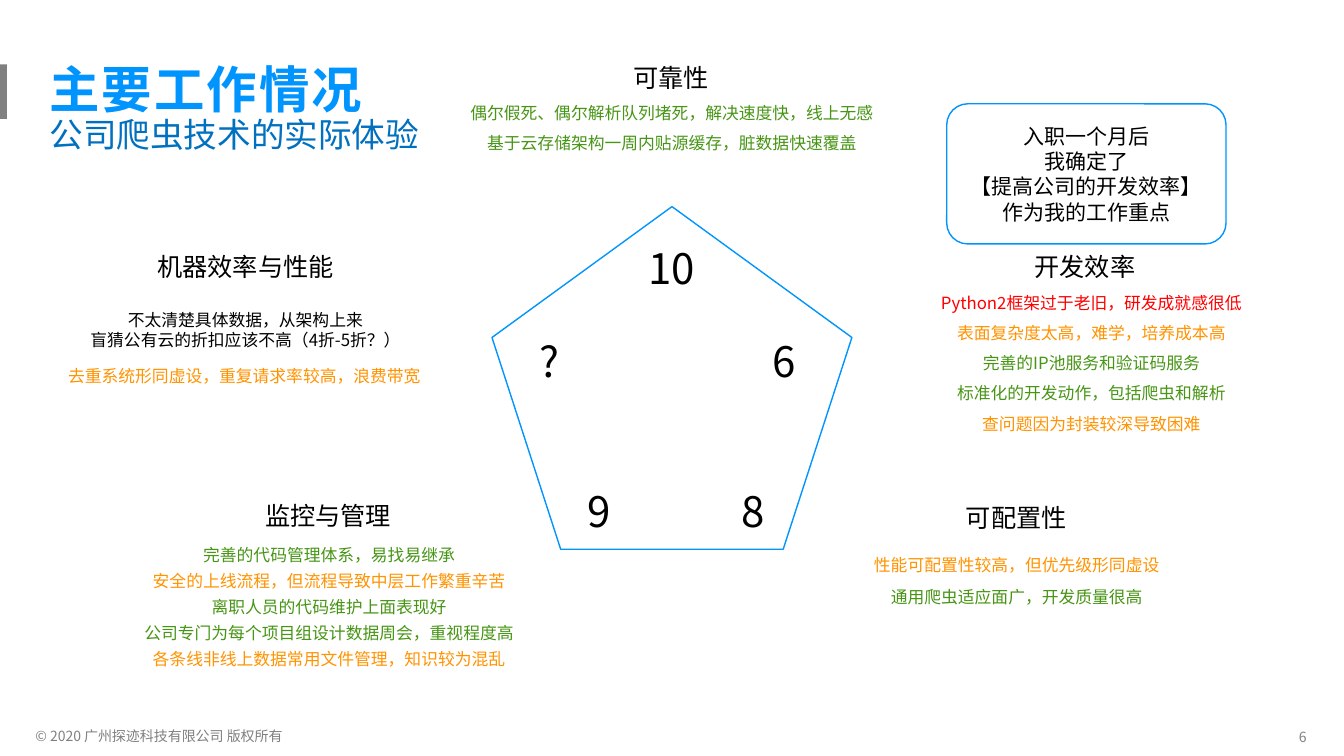
from lxml import etree
from pptx import Presentation
from pptx import util as u
from pptx.dml import color
from pptx.enum import shapes, text
from pptx.oxml import ns

FONT = "Noto Sans CJK SC"
BLUE, GREY, BLACK, WHITE = "0094FF", "808080", "000000", "FFFFFF"
GREEN, ORANGE, RED = "479515", "FF9300", "FF0000"
LEFT, CENTER, RIGHT = text.PP_ALIGN.LEFT, text.PP_ALIGN.CENTER, text.PP_ALIGN.RIGHT


def rgb(value):
    return color.RGBColor.from_string(value)


def place(left, top, width, height):
    return [u.Inches(value) for value in (left, top, width, height)]


def write(frame, lines, size, tint, align=LEFT, inset=0, wrap=True,
          bold=False, spacing=None, tracking=None):
    frame.word_wrap = wrap
    frame.margin_left = frame.margin_right = u.Inches(inset)
    frame.margin_top = frame.margin_bottom = u.Inches(inset)
    frame.text = "\n".join(lines)
    for para in frame.paragraphs:
        para.alignment = align
        para.line_spacing = spacing
        para.font.name = FONT
        para.font.size = u.Pt(size)
        para.font.bold = bold
        para.font.color.rgb = rgb(tint)
        defaults = para._p.pPr.find(ns.qn("a:defRPr"))
        etree.SubElement(defaults, ns.qn("a:ea")).set("typeface", FONT)
        if tracking:
            defaults.set("spc", str(tracking))


def add_text(page, at, lines, size, tint, **style):
    box = page.shapes.add_textbox(*place(*at))
    write(box.text_frame, lines, size, tint, **style)


def add_shape(page, kind, at, fill, line=None):
    shape = page.shapes.add_shape(kind, *place(*at))
    shape.shadow.inherit = False
    shape.fill.solid()
    shape.fill.fore_color.rgb = rgb(fill)
    if line:
        shape.line.color.rgb = rgb(line)
        shape.line.width = u.Pt(1)
    else:
        shape.line.fill.background()
    return shape


def add_remarks(page, left, top, step, remarks):
    for index, (tint, remark) in enumerate(remarks):
        at = (left, top + index * step, 4.17, 0.24)
        add_text(page, at, [remark], 12, tint, align=CENTER)


def add_header(page):
    add_text(page, (0.44, 0.41, 4.77, 0.79), ["主要工作情况"], 36, BLUE,
             inset=0.05, bold=True, spacing=1.2, tracking=150)
    add_shape(page, shapes.MSO_SHAPE.RECTANGLE, (0, 0.64, 0.07, 0.54), GREY)
    add_text(page, (0.44, 1.08, 3.99, 0.56), ["公司爬虫技术的实际体验"], 24,
             "0070C0", inset=0.05)


def add_footer(page):
    add_text(page, (0.35, 7.22, 2.49, 0.19),
             ["© 2020 广州探迹科技有限公司 版权所有"], 10, GREY, wrap=False)
    add_text(page, (12.82, 7.18, 0.19, 0.27), ["6"], 10, GREY,
             align=RIGHT, inset=0.05, wrap=False)


def add_ratings(page):
    add_shape(page, shapes.MSO_SHAPE.REGULAR_PENTAGON,
              (4.88, 2.05, 3.57, 3.4), WHITE, BLUE)
    headings = [
        ("开发效率", 10.26, 2.49, 1.01),
        ("可靠性", 6.28, 0.62, 0.76),
        ("机器效率与性能", 1.56, 2.49, 1.76),
        ("监控与管理", 2.63, 4.96, 1.26),
        ("可配置性", 9.58, 4.98, 1.01),
    ]
    for heading, left, top, width in headings:
        add_text(page, (left, top, width, 0.35), [heading], 18, BLACK, wrap=False)
    scores = [("10", 6.43, 2.41), ("6", 7.66, 3.33), ("8", 7.35, 4.82),
              ("9", 5.83, 4.82), ("?", 5.35, 3.33)]
    for score, left, top in scores:
        at = (left, top, 0.24 * len(score), 0.5)
        add_text(page, at, [score], 30, BLACK, wrap=False)


def add_details(page):
    add_remarks(page, 4.58, 1.02, 0.3, [
        (GREEN, "偶尔假死、偶尔解析队列堵死，解决速度快，线上无感"),
        (GREEN, "基于云存储架构一周内贴源缓存，脏数据快速覆盖"),
    ])
    add_remarks(page, 8.74, 2.9, 0.3, [
        (RED, "Python2框架过于老旧，研发成就感很低"),
        (ORANGE, "表面复杂度太高，难学，培养成本高"),
        (GREEN, "完善的IP池服务和验证码服务"),
        (GREEN, "标准化的开发动作，包括爬虫和解析"),
        (ORANGE, "查问题因为封装较深导致困难"),
    ])
    add_remarks(page, 8, 5.5, 0.32, [
        (ORANGE, "性能可配置性较高，但优先级形同虚设"),
        (GREEN, "通用爬虫适应面广，开发质量很高"),
    ])
    add_remarks(page, 1.18, 5.4, 0.26, [
        (GREEN, "完善的代码管理体系，易找易继承"),
        (ORANGE, "安全的上线流程，但流程导致中层工作繁重辛苦"),
        (GREEN, "离职人员的代码维护上面表现好"),
        (GREEN, "公司专门为每个项目组设计数据周会，重视程度高"),
        (ORANGE, "各条线非线上数据常用文件管理，知识较为混乱"),
    ])
    add_text(page, (0.35, 3.07, 4.17, 0.47),
             ["不太清楚具体数据，从架构上来", "盲猜公有云的折扣应该不高（4折-5折？）"],
             12, BLACK, align=CENTER)
    add_remarks(page, 0.34, 3.63, 0, [
        (ORANGE, "去重系统形同虚设，重复请求率较高，浪费带宽"),
    ])


def add_focus(page):
    card = add_shape(page, shapes.MSO_SHAPE.ROUNDED_RECTANGLE,
                     (9.39, 1.03, 2.77, 1.39), WHITE, BLUE)
    card.adjustments[0] = 0.15
    card.text_frame.vertical_anchor = text.MSO_ANCHOR.MIDDLE
    write(card.text_frame,
          ["入职一个月后", "我确定了", "【提高公司的开发效率】", "作为我的工作重点"],
          15, BLACK, align=CENTER)


def main():
    deck = Presentation()
    deck.slide_width, deck.slide_height = u.Inches(13.33), u.Inches(7.5)
    page = deck.slides.add_slide(deck.slide_layouts[6])
    add_footer(page)
    add_header(page)
    add_ratings(page)
    add_details(page)
    add_focus(page)
    deck.save("out.pptx")


if __name__ == "__main__":
    main()
